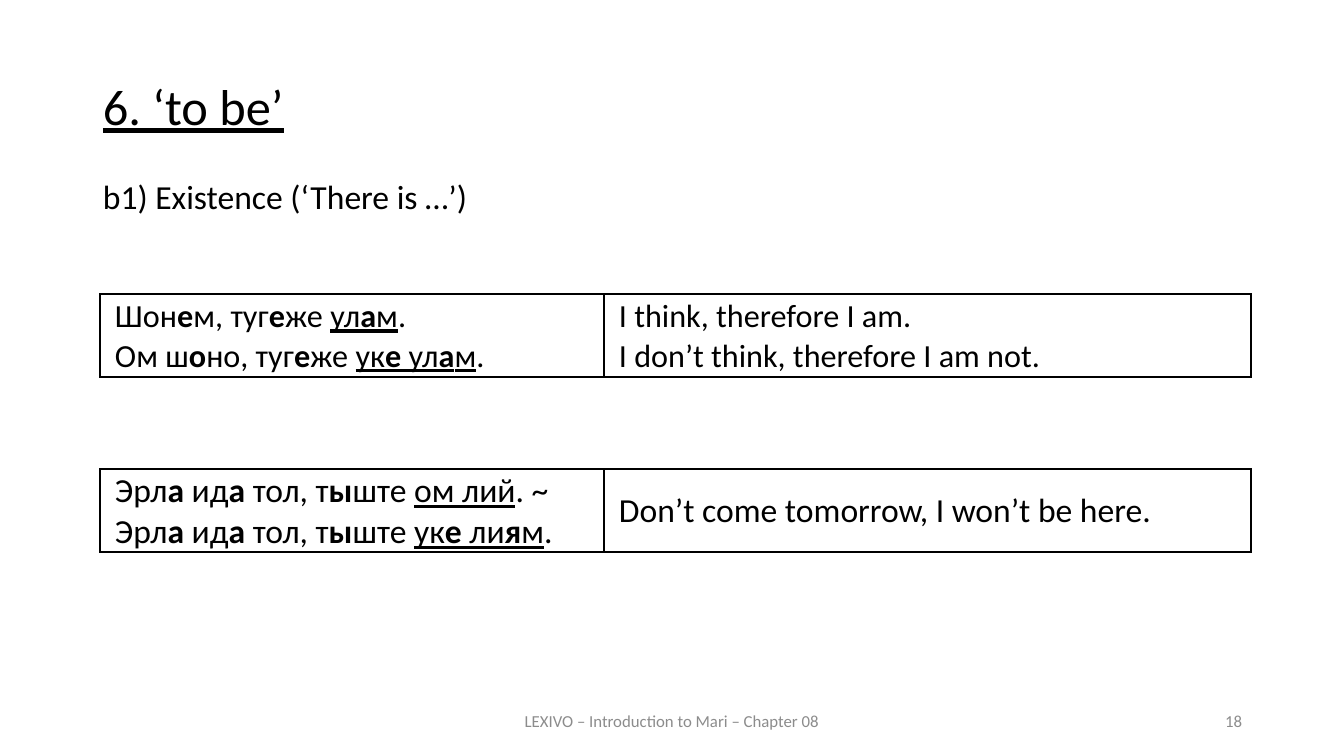
import pptx
import pptx.dml.color
import pptx.enum.text
import pptx.oxml.ns
import pptx.util
from lxml import etree

# Content: * switches bold, _ switches underline
BLACK, GREY = "000000", "8C8C8C"
ALIGN = pptx.enum.text.PP_ALIGN
ANCHOR = pptx.enum.text.MSO_ANCHOR

# text, box (px), size, colour, alignment, anchor, line spacing, space before
TEXTS = [
    ("_6. ‘to be’_", (93, 77, 1159, 84), 36, BLACK, ALIGN.JUSTIFY, ANCHOR.TOP, 0.9, 12),
    ("b1) Existence (‘There is …’)", (93, 175, 1159, 134), 24, BLACK, ALIGN.LEFT, ANCHOR.TOP, 0.9, 10),
    ("LEXIVO – Introduction to Mari – Chapter 08", (445, 701, 454, 40), 12, GREY,
     ALIGN.CENTER, ANCHOR.MIDDLE, 1.0, 0),
    ("18", (950, 701, 302, 40), 12, GREY, ALIGN.RIGHT, ANCHOR.MIDDLE, 1.0, 0),
]

# top (px), row height (px), text size, Mari lines, English lines
EXAMPLES = [
    (294, 83, 23,
     ["Шон*е*м, туг*е*же _ул*а*м_.", "Ом ш*о*но, туг*е*же _ук*е* ул*а*м_."],
     ["I think, therefore I am.", "I don’t think, therefore I am not."]),
    (469, 80, 24,
     ["Эрл*а* ид*а* тол, т*ы*ште _ом лий_. ~", "Эрл*а* ид*а* тол, т*ы*ште _ук*е* ли*я*м_."],
     ["Don’t come tomorrow, I won’t be here."]),
]
TABLE_LEFT = 100
COLUMN_WIDTHS = [504, 647]
CELL_MARGINS = (15, 2, 15, 0)
OUTER_LINE, INNER_LINE = 1.5, 1


def px(length):
    return round(length * 914400 / 100.8)


def rgb(colour):
    return pptx.dml.color.RGBColor.from_string(colour)


def write(paragraph, marked, size, colour):
    """Turn marked text into runs."""
    bold = underline = False
    for part in marked.replace("*", "|*|").replace("_", "|_|").split("|"):
        if part == "*":
            bold = not bold
        elif part == "_":
            underline = not underline
        elif part:
            run = paragraph.add_run()
            run.text = part
            font = run.font
            font.name, font.size = "Calibri", pptx.util.Pt(size)
            font.bold, font.underline = bold, underline
            font.color.rgb = rgb(colour)


def add_border(cell, side, width):
    qn = pptx.oxml.ns.qn
    line = etree.SubElement(cell._tc.get_or_add_tcPr(), qn(f"a:ln{side}"),
                            w=str(pptx.util.Pt(width)))
    fill = etree.SubElement(line, qn("a:solidFill"))
    etree.SubElement(fill, qn("a:srgbClr"), val=BLACK)


def add_text(slide, marked, box, size, colour, align, anchor, spacing, before):
    frame = slide.shapes.add_textbox(*map(px, box)).text_frame
    frame.word_wrap = True
    frame.vertical_anchor = anchor
    paragraph = frame.paragraphs[0]
    paragraph.alignment = align
    paragraph.line_spacing = spacing
    paragraph.space_before = pptx.util.Pt(before)
    write(paragraph, marked, size, colour)


def add_example(slide, top, height, size, *languages):
    table = slide.shapes.add_table(1, len(languages), px(TABLE_LEFT), px(top),
                                   px(sum(COLUMN_WIDTHS)), px(height)).table
    table.first_row = table.horz_banding = False
    last = len(languages) - 1
    for index, lines in enumerate(languages):
        table.columns[index].width = px(COLUMN_WIDTHS[index])
        cell = table.cell(0, index)
        cell.vertical_anchor = ANCHOR.MIDDLE
        cell.margin_left, cell.margin_top, cell.margin_right, cell.margin_bottom = map(px, CELL_MARGINS)
        # Borders come before the fill in the cell properties
        add_border(cell, "L", INNER_LINE if index > 0 else OUTER_LINE)
        add_border(cell, "R", INNER_LINE if index < last else OUTER_LINE)
        add_border(cell, "T", OUTER_LINE)
        add_border(cell, "B", OUTER_LINE)
        cell.fill.background()
        frame = cell.text_frame
        for number, line in enumerate(lines):
            paragraph = frame.add_paragraph() if number else frame.paragraphs[0]
            write(paragraph, line, size, BLACK)


def main():
    deck = pptx.Presentation()
    deck.slide_width, deck.slide_height = px(1344), px(756)
    slide = deck.slides.add_slide(deck.slide_layouts[6])
    for text in TEXTS:
        add_text(slide, *text)
    for example in EXAMPLES:
        add_example(slide, *example)
    deck.save("out.pptx")


if __name__ == "__main__":
    main()
